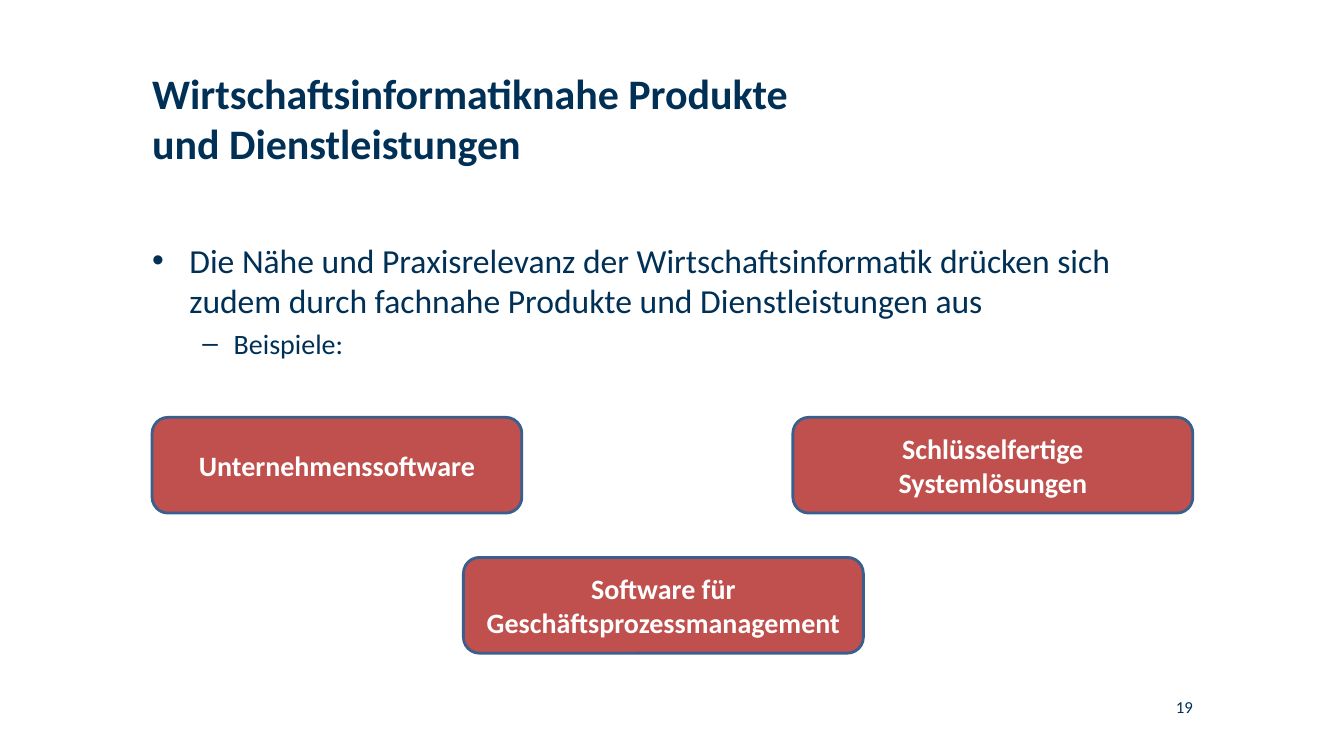
from pptx import Presentation
from pptx import util as u
from pptx.dml.color import RGBColor
from pptx.enum import shapes, text

NAVY = RGBColor(0x00, 0x30, 0x56)
RED = RGBColor(0xC0, 0x50, 0x4D)
BLUE = RGBColor(0x3A, 0x5F, 0x8C)
WHITE = RGBColor(0xFF, 0xFF, 0xFF)

# Content
TITLE = "Wirtschaftsinformatiknahe Produkte und Dienstleistungen"
# text, level, size, left margin, hanging indent
POINTS = [
    ("Die Nähe und Praxisrelevanz der Wirtschaftsinformatik drücken sich "
     "zudem durch fachnahe Produkte und Dienstleistungen aus", 0, 24, 0.37, -0.37),
    ("Beispiele:", 1, 20, 0.81, -0.31),
]
# text, left, top, width
BOXES = [
    ("Unternehmenssoftware", 1.51, 4.14, 3.67),
    ("Software für Geschäftsprozessmanagement", 4.6, 5.53, 3.97),
    ("Schlüsselfertige Systemlösungen", 7.87, 4.14, 3.97),
]
HIGH = 0.95
PAGE = "19"


def write(para, words, size, color=NAVY, bold=False, align=text.PP_ALIGN.LEFT):
    para.alignment = align
    run = para.add_run()
    run.text = words
    font = run.font
    font.name, font.size, font.bold = "Calibri", u.Pt(size), bold
    font.color.rgb = color


def place(shape, left, top, width, height):
    shape.left, shape.top = u.Inches(left), u.Inches(top)
    shape.width, shape.height = u.Inches(width), u.Inches(height)


def frame(shape):
    tf = shape.text_frame
    tf.margin_left = tf.margin_top = tf.margin_right = tf.margin_bottom = 0
    tf.word_wrap = True
    tf.auto_size = text.MSO_AUTO_SIZE.NONE
    tf.vertical_anchor = text.MSO_ANCHOR.TOP
    return tf


deck = Presentation()
deck.slide_width, deck.slide_height = u.Inches(13.34), u.Inches(7.5)
slide = deck.slides.add_slide(deck.slide_layouts[1])

# Title
title = slide.shapes.title
place(title, 1.51, 0.67, 7.06, 1.37)
write(frame(title).paragraphs[0], TITLE, 30, bold=True)

# Bullet list
body = slide.placeholders[1]
place(body, 1.51, 2.38, 10.31, 1.37)
tf = frame(body)
for i, (words, level, size, left, hang) in enumerate(POINTS):
    para = tf.add_paragraph() if i else tf.paragraphs[0]
    para.level = level
    write(para, words, size)
    props = para._p.get_or_add_pPr()
    props.set("marL", str(u.Inches(left)))
    props.set("indent", str(u.Inches(hang)))

# Page number
page = slide.shapes.add_textbox(
    u.Inches(10.3), u.Inches(6.91), u.Inches(1.54), u.Inches(0.2))
write(frame(page).paragraphs[0], PAGE, 12, align=text.PP_ALIGN.RIGHT)

# Example boxes
for words, left, top, width in BOXES:
    box = slide.shapes.add_shape(
        shapes.MSO_SHAPE.ROUNDED_RECTANGLE,
        u.Inches(left), u.Inches(top), u.Inches(width), u.Inches(HIGH))
    box.shadow.inherit = False
    box.fill.solid()
    box.fill.fore_color.rgb = RED
    box.line.color.rgb = BLUE
    box.line.width = u.Pt(2)
    box.text_frame.word_wrap = True
    box.text_frame.vertical_anchor = text.MSO_ANCHOR.MIDDLE
    write(box.text_frame.paragraphs[0], words, 20, WHITE, True,
          text.PP_ALIGN.CENTER)

deck.save("out.pptx")
